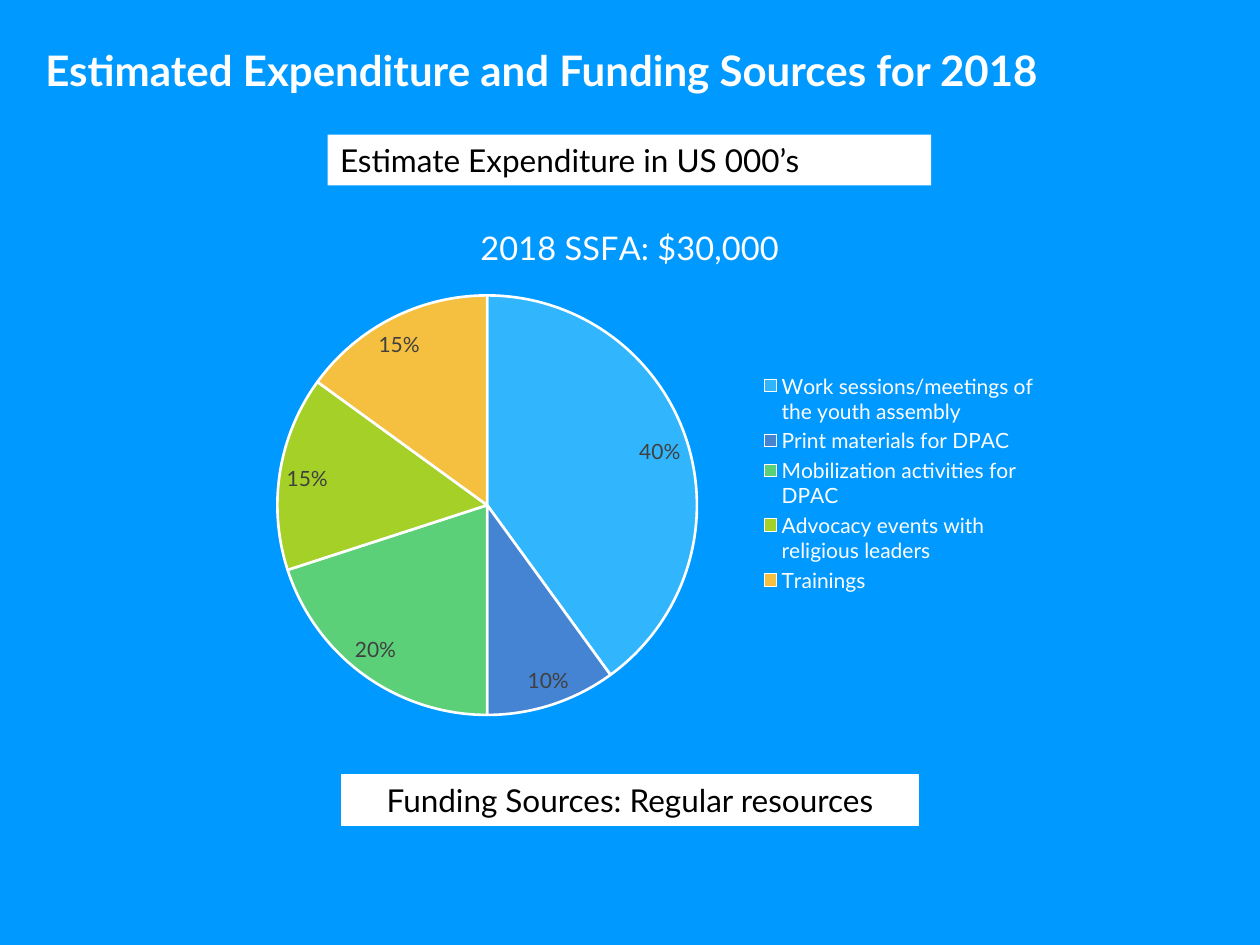
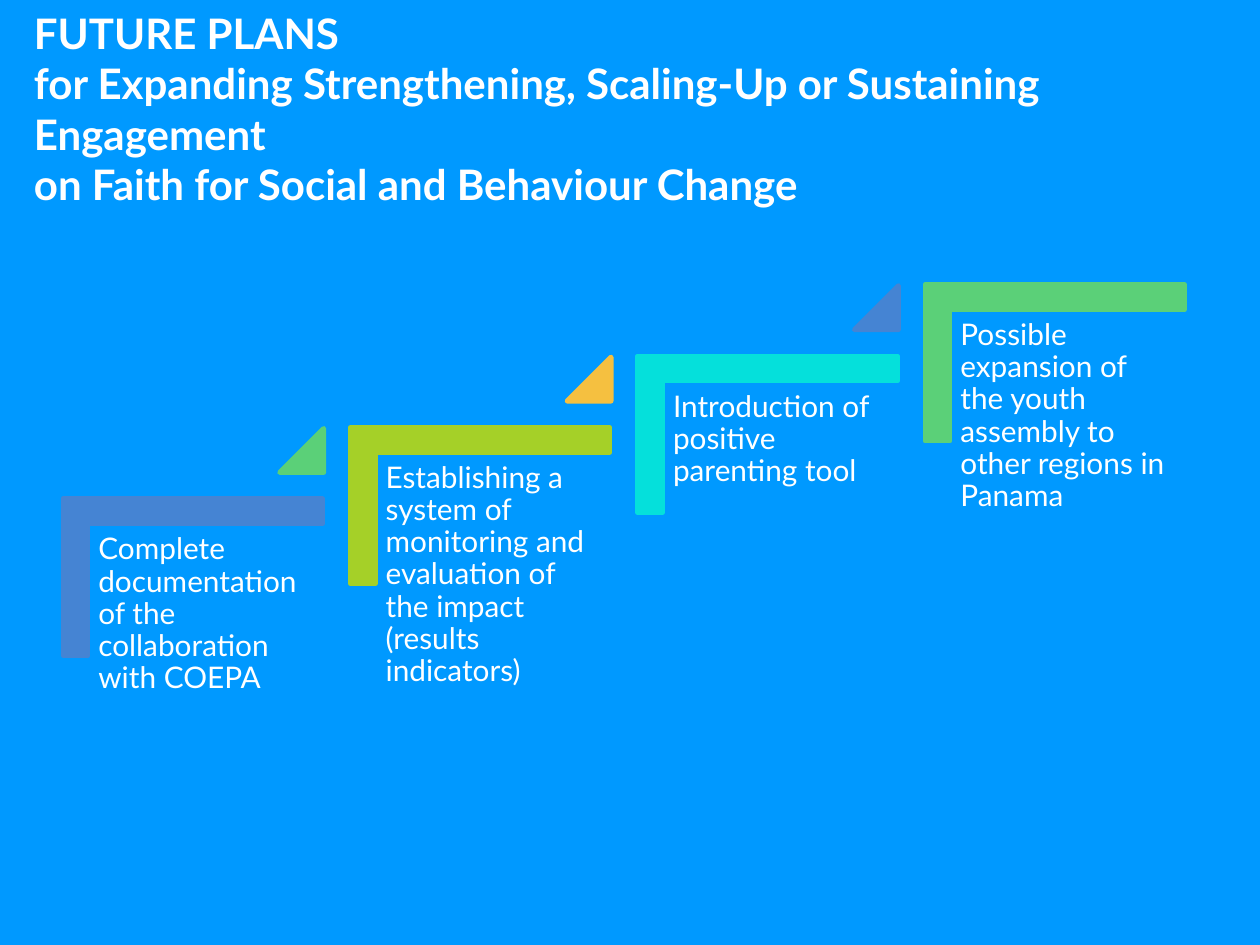
"""Build two slides: 2018 expenditure with funding sources, and future plans as rising steps."""
from lxml import etree
from pptx import Presentation
from pptx import util as u
from pptx.chart.data import CategoryChartData
from pptx.dml.color import RGBColor
from pptx.enum import chart as ch, shapes, text
from pptx.oxml.ns import qn

Pt = u.Pt
FONT = "Lato"
BLUE, GREEN, LIME, AMBER = "4584D3", "5BD078", "A5D028", "F5C040"
SKY, TURQUOISE = "31B6FD", "05E0DB"
WHITE, BLACK, GREY, BACKDROP = "FFFFFF", "000000", "404040", "0099FF"
TITLE_FRAME = {"word_wrap": True, "auto_size": text.MSO_AUTO_SIZE.NONE,
               "vertical_anchor": text.MSO_ANCHOR.TOP}


def style(font, size, colour, bold=False):
    """Apply the deck font with the given size and hex colour."""
    values = {"name": FONT, "size": Pt(size), "bold": bold}
    for name, value in values.items():
        setattr(font, name, value)
    font.color.rgb = RGBColor.from_string(colour)


def fix_layout(parent, index, fractions, inner=False):
    """Give a chart part a fixed place as fractions of the chart area."""
    for old in parent.findall(qn("c:layout")):
        parent.remove(old)
    layout = etree.Element(qn("c:layout"))
    manual = etree.SubElement(layout, qn("c:manualLayout"))
    settings = [("layoutTarget", "inner")] if inner else []
    settings += [("xMode", "edge"), ("yMode", "edge")]
    settings += zip("xywh", fractions)
    for tag, value in settings:
        etree.SubElement(manual, qn(f"c:{tag}")).set("val", str(value))
    parent.insert(index, layout)


prs = Presentation()
prs.slide_width, prs.slide_height = Pt(720), Pt(540)
backdrop = prs.slide_master.background.fill
backdrop.solid()
backdrop.fore_color.rgb = RGBColor.from_string(BACKDROP)

headings = [
    ("Estimated Expenditure and Funding Sources for 2018", (18.7, 21.6, 629.3, 36)),
    ("FUTURE PLANS\n"
     "for Expanding Strengthening, Scaling-Up or Sustaining Engagement\n"
     "on Faith for Social and Behaviour Change", (12.2, 0.7, 696.2, 94.3)),
]
for heading, place in headings:
    slide = prs.slides.add_slide(prs.slide_layouts[5])
    title = slide.shapes.title
    title.left, title.top, title.width, title.height = map(Pt, place)
    title.text_frame.text = heading
    for name, value in TITLE_FRAME.items():
        setattr(title.text_frame, name, value)
    for line in title.text_frame.paragraphs:
        line.alignment = text.PP_ALIGN.LEFT
        style(line.font, 24, WHITE, bold=True)
budget, plans = prs.slides

captions = [
    ("Estimate Expenditure in US 000’s", (187.2, 77, 344.9, 29), text.PP_ALIGN.LEFT),
    ("Funding Sources: Regular resources", (195.1, 442.8, 329.8, 29), text.PP_ALIGN.CENTER),
]
for wording, place, alignment in captions:
    caption = budget.shapes.add_textbox(*map(Pt, place))
    caption.fill.solid()
    caption.fill.fore_color.rgb = RGBColor.from_string(WHITE)
    caption.text_frame.word_wrap = True
    caption.text_frame.text = wording
    line = caption.text_frame.paragraphs[0]
    line.alignment = alignment
    style(line.font, 18, BLACK)
caption.line.color.rgb = RGBColor.from_string(WHITE)
caption.line.width = Pt(0.75)

expenses = [
    ("Work sessions/meetings of the youth assembly", 0.4, SKY),
    ("Print materials for DPAC", 0.1, BLUE),
    ("Mobilization activities for DPAC", 0.2, GREEN),
    ("Advocacy events with religious leaders", 0.15, LIME),
    ("Trainings", 0.15, AMBER),
]
total = "2018 SSFA: $30,000"
shares = CategoryChartData(number_format="0%")
shares.categories = [activity for activity, _, _ in expenses]
shares.add_series(total, [share for _, share, _ in expenses])
pie = budget.shapes.add_chart(ch.XL_CHART_TYPE.PIE, Pt(120), Pt(114.5),
                              Pt(480), Pt(319.7), shares).chart
style(pie.font, 10, BLACK)
pie.has_title = True
pie.chart_title.text_frame.text = total
style(pie.chart_title.text_frame.paragraphs[0].runs[0].font, 18.6, WHITE)
pie.chart_title.include_in_layout = False

pie.has_legend = True
pie.legend.position = ch.XL_LEGEND_POSITION.RIGHT
pie.legend.include_in_layout = False
style(pie.legend.font, 12, WHITE)

plot = pie.plots[0]
plot.vary_by_categories = True
for index, (_, _, colour) in enumerate(expenses):
    slice_format = plot.series[0].points[index].format
    slice_format.fill.solid()
    slice_format.fill.fore_color.rgb = RGBColor.from_string(colour)
    slice_format.line.color.rgb = RGBColor.from_string(WHITE)
    slice_format.line.width = Pt(1.5)
labels = plot.series[0].data_labels
label_format = {"show_value": True, "number_format": "0%",
                "number_format_is_linked": False,
                "position": ch.XL_LABEL_POSITION.BEST_FIT}
for name, value in label_format.items():
    setattr(labels, name, value)
style(labels.font, 12, GREY)

chart_xml = pie.element.find(qn("c:chart"))
fix_layout(chart_xml.find(qn("c:plotArea")), 0, (0.08, 0.17, 0.5, 0.75), inner=True)
fix_layout(chart_xml.find(qn("c:legend")), 1, (0.65, 0.3, 0.34, 0.41))

steps = [
    ("Complete documentation of the collaboration with COEPA", BLUE, GREEN),
    ("Establishing a system of monitoring and evaluation of the impact (results indicators)",
     LIME, AMBER),
    ("Introduction of positive parenting tool", TURQUOISE, BLUE),
    ("Possible expansion of the youth assembly to other regions in Panama", GREEN, None),
]
STEP_RUN, STEP_RISE = 164.2, 40.8
for index, (plan, colour, marker_colour) in enumerate(steps):
    left, top = 51.1 + index * STEP_RUN, 300.2 - index * STEP_RISE
    bracket = plans.shapes.add_shape(shapes.MSO_SHAPE.CORNER, Pt(left + 14.4),
                                     Pt(top - 44.6), Pt(89.3), Pt(148.3))
    bracket.rotation = 90
    bracket.adjustments[0] = bracket.adjustments[1] = 0.16
    parts = [(bracket, colour)]
    if marker_colour:
        marker = plans.shapes.add_shape(shapes.MSO_SHAPE.ISOSCELES_TRIANGLE, Pt(left + 108.7),
                                        Pt(top - 55.4), Pt(25.2), Pt(25.2))
        marker.adjustments[0] = 1
        parts.append((marker, marker_colour))
    for part, part_colour in parts:
        part.shadow.inherit = False
        part.fill.solid()
        part.fill.fore_color.rgb = RGBColor.from_string(part_colour)
        part.line.color.rgb = RGBColor.from_string(part_colour)
        part.line.width = Pt(2.75)

    description = plans.shapes.add_textbox(Pt(left), Pt(top), Pt(133.9), Pt(117.4)).text_frame
    description.word_wrap = True
    for side in ("left", "top", "right", "bottom"):
        setattr(description, f"margin_{side}", Pt(5.1))
    description.text = plan
    line = description.paragraphs[0]
    line.line_spacing = 0.9
    style(line.font, 17, WHITE)

prs.save("out.pptx")
